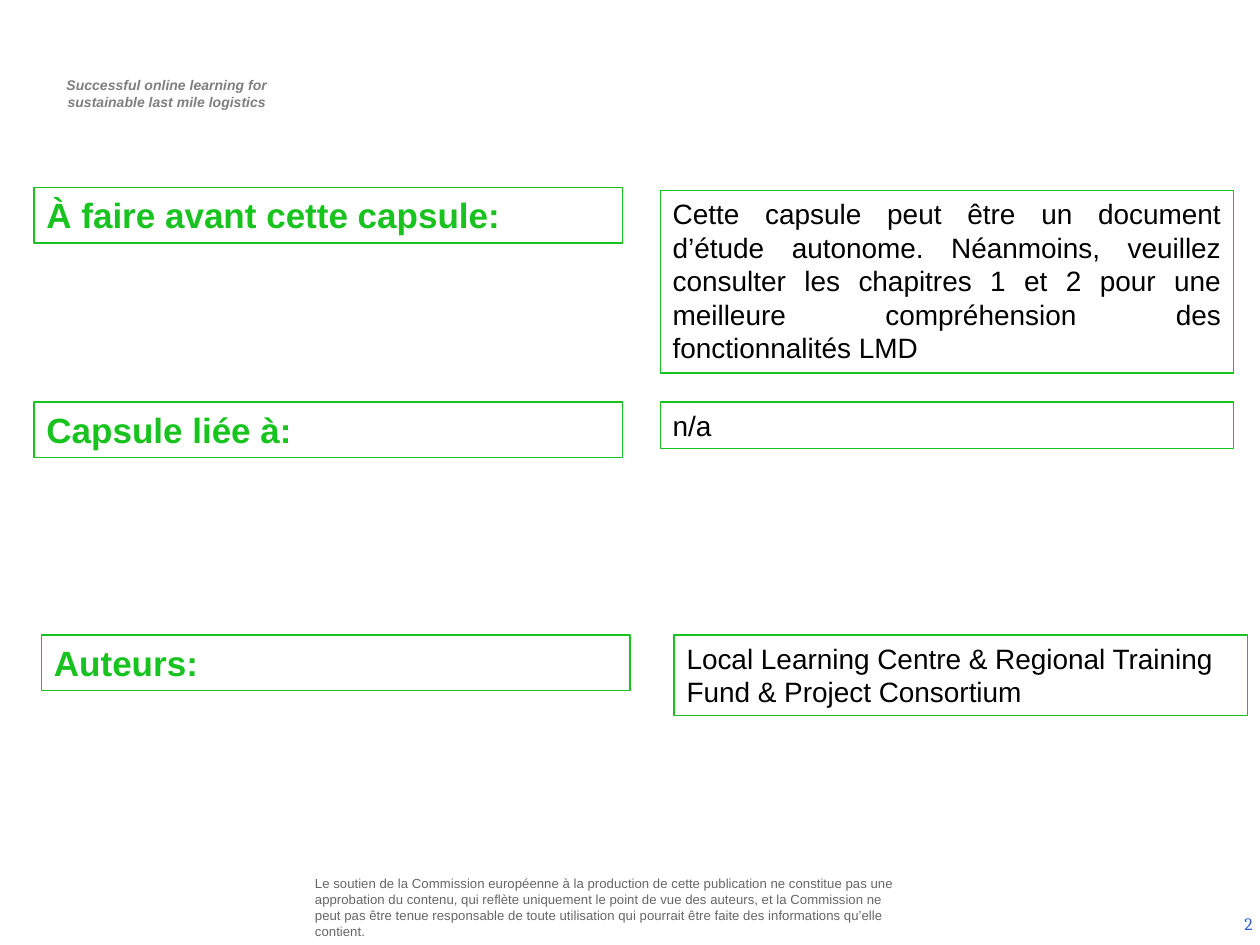
from pptx import Presentation
from pptx.dml.color import RGBColor
from pptx.enum.shapes import MSO_SHAPE
from pptx.enum.text import MSO_ANCHOR, PP_ALIGN
from pptx.util import Inches, Pt

LEFT, CENTER, RIGHT, JUSTIFY = PP_ALIGN.LEFT, PP_ALIGN.CENTER, PP_ALIGN.RIGHT, PP_ALIGN.JUSTIFY
TOP, MIDDLE = MSO_ANCHOR.TOP, MSO_ANCHOR.MIDDLE
RECTANGLE = MSO_SHAPE.RECTANGLE

COLORS = {"green": "18C320", "white": "FFFFFF", "black": "000000",
          "header": "7F7F7F", "notice": "666666", "number": "3366CC"}

HEADER = ["Successful online learning for", "sustainable last mile logistics"]
NOTICE = ("Le soutien de la Commission européenne à la production de cette publication ne "
          "constitue pas une approbation du contenu, qui reflète uniquement le point de vue "
          "des auteurs, et la Commission ne peut pas être tenue responsable de toute "
          "utilisation qui pourrait être faite des informations qu’elle contient.")
PAGE_NUMBER = "2"

LABEL_WIDTH, LABEL_HEIGHT, ANSWER_WIDTH = 4.67, 0.44, 4.55
ROWS = [
    {"label": "À faire avant cette capsule:", "label_at": (0.27, 1.49),
     "answer": "Cette capsule peut être un document d’étude autonome. Néanmoins, veuillez "
               "consulter les chapitres 1 et 2 pour une meilleure compréhension des "
               "fonctionnalités LMD",
     "answer_at": (5.24, 1.51), "height": 1.45, "align": JUSTIFY},
    {"label": "Capsule liée à:", "label_at": (0.27, 3.19),
     "answer": "n/a", "answer_at": (5.24, 3.19), "height": 0.37, "align": LEFT},
    {"label": "Auteurs:", "label_at": (0.33, 5.04),
     "answer": "Local Learning Centre & Regional Training Fund & Project Consortium",
     "answer_at": (5.35, 5.04), "height": 0.64, "align": LEFT},
]


def color(name):
    return RGBColor.from_string(COLORS[name])


def write(box, lines, size, ink, font="Arial", bold=False, italic=False,
          align=LEFT, anchor=TOP, insets=(0.1, 0.05), indent=0):
    frame = box.text_frame
    frame.word_wrap = True
    frame.vertical_anchor = anchor
    frame.margin_left = frame.margin_right = Inches(insets[0])
    frame.margin_top = frame.margin_bottom = Inches(insets[1])
    frame.text = "\n".join(lines)
    for para in frame.paragraphs:
        if indent:
            para._p.get_or_add_pPr().set("marL", str(Inches(indent)))
        para.alignment = align
        para.font.name = font
        para.font.size = Pt(size)
        para.font.bold = bold
        para.font.italic = italic
        para.font.color.rgb = color(ink)


def add_text(page, area, lines, size, ink, **style):
    box = page.shapes.add_textbox(*map(Inches, area))
    write(box, lines, size, ink, **style)


def add_frame(page, area, text, size, ink, **style):
    box = page.shapes.add_shape(RECTANGLE, *map(Inches, area))
    box.shadow.inherit = False
    box.fill.solid()
    box.fill.fore_color.rgb = color("white")
    box.line.color.rgb = color("green")
    box.line.width = Pt(0.75)
    write(box, [text], size, ink, **style)


def main():
    deck = Presentation()
    deck.slide_width, deck.slide_height = Inches(10), Inches(7.5)
    page = deck.slides.add_slide(deck.slide_layouts[6])

    add_text(page, (0.29, 0.56, 2.03, 0.37), HEADER, 8, "header",
             bold=True, italic=True, align=CENTER, indent=0.04)
    add_text(page, (2.46, 6.95, 4.73, 0.5), [NOTICE], 7.5, "notice",
             anchor=MIDDLE, insets=(0.04, 0.04))
    add_text(page, (7.71, 7.13, 2.33, 0.4), [PAGE_NUMBER], 10, "number",
             font="Cambria", align=RIGHT, anchor=MIDDLE)

    for row in ROWS:
        add_frame(page, (*row["label_at"], LABEL_WIDTH, LABEL_HEIGHT),
                  row["label"], 20, "green", bold=True)
        add_frame(page, (*row["answer_at"], ANSWER_WIDTH, row["height"]),
                  row["answer"], 16, "black", align=row["align"])

    deck.save("out.pptx")


if __name__ == "__main__":
    main()
